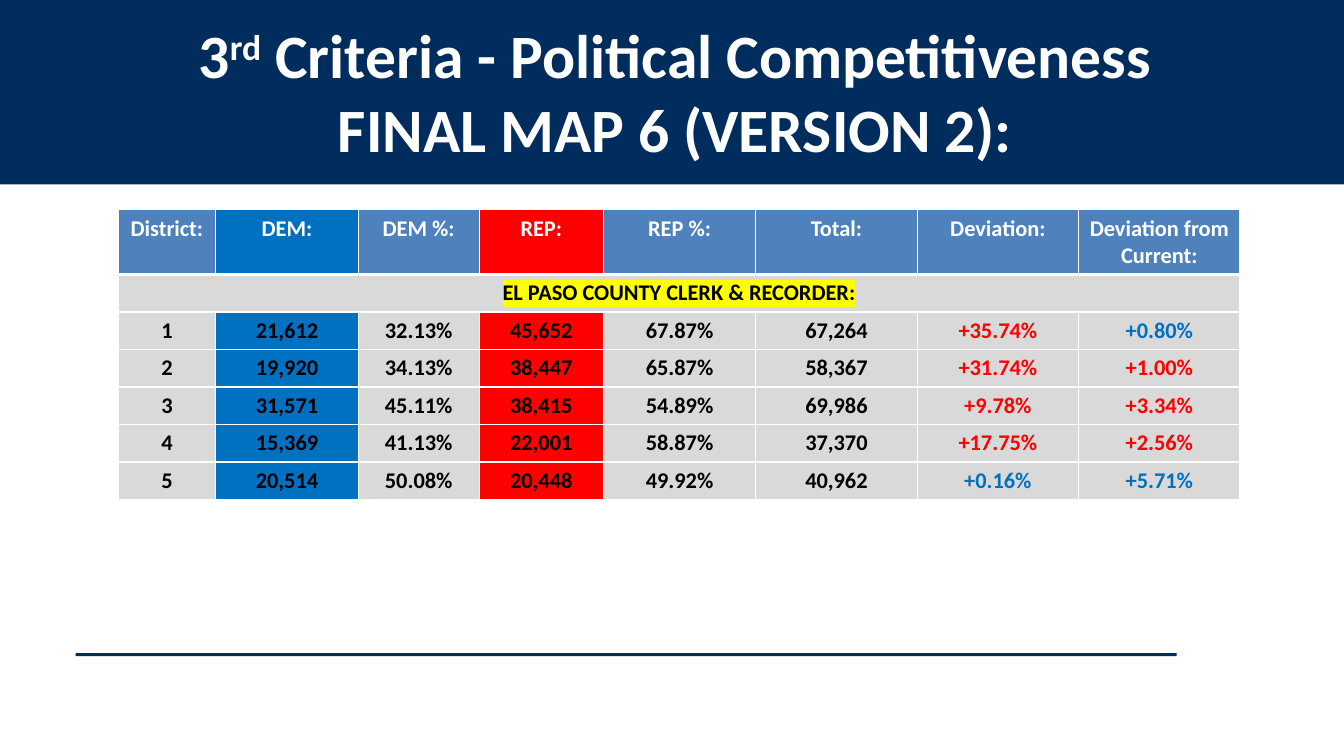
from lxml import etree
from pptx import Presentation
from pptx.dml.color import RGBColor
from pptx.enum.shapes import MSO_SHAPE
from pptx.enum.text import MSO_ANCHOR, MSO_AUTO_SIZE, PP_ALIGN
from pptx.oxml.ns import qn
from pptx.util import Inches, Pt

RECTANGLE = MSO_SHAPE.RECTANGLE
CENTER = PP_ALIGN.CENTER
TOP = MSO_ANCHOR.TOP
NO_AUTOFIT = MSO_AUTO_SIZE.NONE

NAVY, STEEL, GRAY = "002D5D", "4F81BD", "D9D9D9"
BLUE, RED, YELLOW = "0070C0", "FF0000", "FFFF00"
WHITE, BLACK = "FFFFFF", "000000"


def color(hex_string):
    return RGBColor.from_string(hex_string)


def add_text(paragraph, text, size=16, text_color=BLACK, highlight=None, baseline=None):
    paragraph.alignment = CENTER
    run = paragraph.add_run()
    run.text = text
    run.font.size = Pt(size)
    run.font.bold = True
    run.font.color.rgb = color(text_color)
    if highlight:
        marker = etree.SubElement(run._r.get_or_add_rPr(), qn("a:highlight"))
        etree.SubElement(marker, qn("a:srgbClr"), val=highlight)
    run.font.name = "Calibri"
    if baseline:
        run._r.get_or_add_rPr().set("baseline", str(baseline * 1000))


presentation = Presentation()
presentation.slide_width = Inches(13.33)
presentation.slide_height = Inches(7.5)
across = presentation.slide_width / 100
down = presentation.slide_height / 100
slide = presentation.slides.add_slide(presentation.slide_layouts[5])
title = slide.shapes.title

bars = [(0, -0.4, 100, 24.8), (5.63, 86.4, 81.92, 0.4)]
for left, top, width, height in bars:
    bar = slide.shapes.add_shape(
        RECTANGLE, int(left * across), int(top * down), int(width * across), int(height * down)
    )
    bar.shadow.inherit = False
    bar.fill.solid()
    bar.fill.fore_color.rgb = color(NAVY)
    bar.line.fill.background()
    title.element.addprevious(bar.element)

title.left, title.top = int(4.2 * across), int(1.6 * down)
title.width, title.height = int(88.37 * across), int(30.93 * down)
title_frame = title.text_frame
title_frame.word_wrap = True
title_frame.auto_size = NO_AUTOFIT
title_frame.vertical_anchor = TOP
title_frame.margin_left = Inches(0.6)
first_line = title_frame.paragraphs[0]
for text, baseline in [("3", None), ("rd", 30), (" Criteria - Political Competitiveness", None)]:
    add_text(first_line, text, size=44, text_color=WHITE, baseline=baseline)
add_text(title_frame.add_paragraph(), "FINAL MAP 6 (VERSION 2):", size=44, text_color=WHITE)

headers = ["District:", "DEM:", "DEM %:", "REP:", "REP %:", "Total:", "Deviation:", "Deviation from Current:"]
section = "EL PASO COUNTY CLERK & RECORDER:"
districts = [
    ["1", "21,612", "32.13%", "45,652", "67.87%", "67,264", "+35.74%", "+0.80%"],
    ["2", "19,920", "34.13%", "38,447", "65.87%", "58,367", "+31.74%", "+1.00%"],
    ["3", "31,571", "45.11%", "38,415", "54.89%", "69,986", "+9.78%", "+3.34%"],
    ["4", "15,369", "41.13%", "22,001", "58.87%", "37,370", "+17.75%", "+2.56%"],
    ["5", "20,514", "50.08%", "20,448", "49.92%", "40,962", "+0.16%", "+5.71%"],
]
blue_values = {"+0.80%", "+0.16%", "+5.71%"}
party_fills = {1: BLUE, 3: RED}
column_shares = [0.97, 1.41, 1.2, 1.23, 1.51, 1.6, 1.6, 1.6]
table_width = 83.5 * across
header_height, row_height = 8.27 * down, 4.93 * down

rows = [headers, [section] + [""] * 7] + districts
table = slide.shapes.add_table(
    len(rows), len(headers), int(8.78 * across), int(27.73 * down),
    int(table_width), int(header_height + 6 * row_height),
).table
for column, share in zip(table.columns, column_shares):
    column.width = int(table_width * share / sum(column_shares))
for row_index, values in enumerate(rows):
    table.rows[row_index].height = int(row_height if row_index else header_height)
    for column_index, value in enumerate(values):
        cell = table.cell(row_index, column_index)
        cell_properties = cell._tc.get_or_add_tcPr()
        for side in ("L", "R", "T", "B"):
            thick = (row_index, side) in {(0, "B"), (1, "T")}
            border = etree.SubElement(cell_properties, qn(f"a:ln{side}"), w=str(Pt(3 if thick else 1)))
            border_fill = etree.SubElement(border, qn("a:solidFill"))
            etree.SubElement(border_fill, qn("a:srgbClr"), val=WHITE)
        base_fill = GRAY if row_index else STEEL
        cell.fill.solid()
        cell.fill.fore_color.rgb = color(base_fill if row_index == 1 else party_fills.get(column_index, base_fill))
        if not value:
            continue
        text_color = BLACK if row_index else WHITE
        if value.startswith("+"):
            text_color = BLUE if value in blue_values else RED
        add_text(
            cell.text_frame.paragraphs[0], value, text_color=text_color,
            highlight=YELLOW if value == section else None,
        )
table.cell(1, 0).merge(table.cell(1, len(headers) - 1))

presentation.save("out.pptx")
